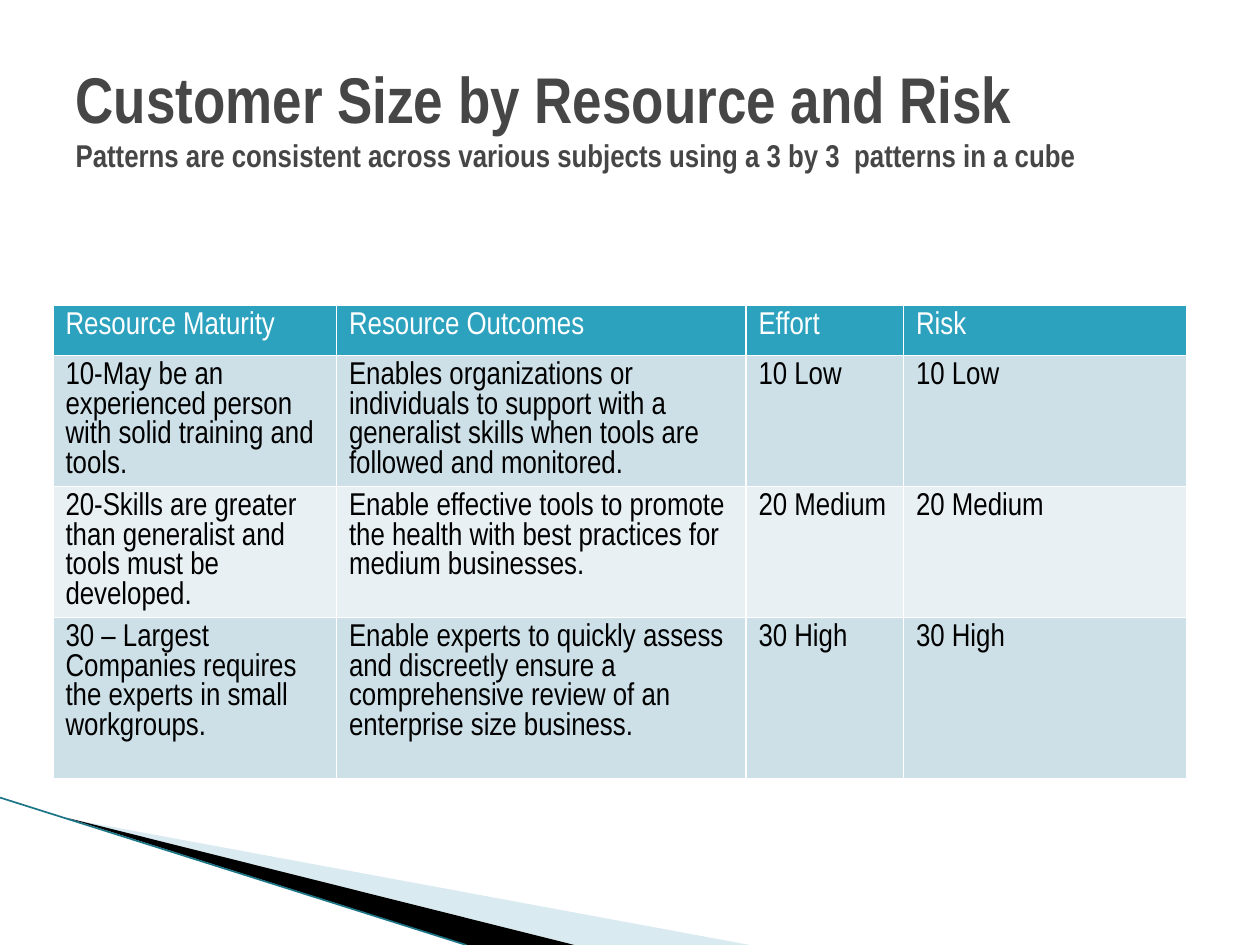
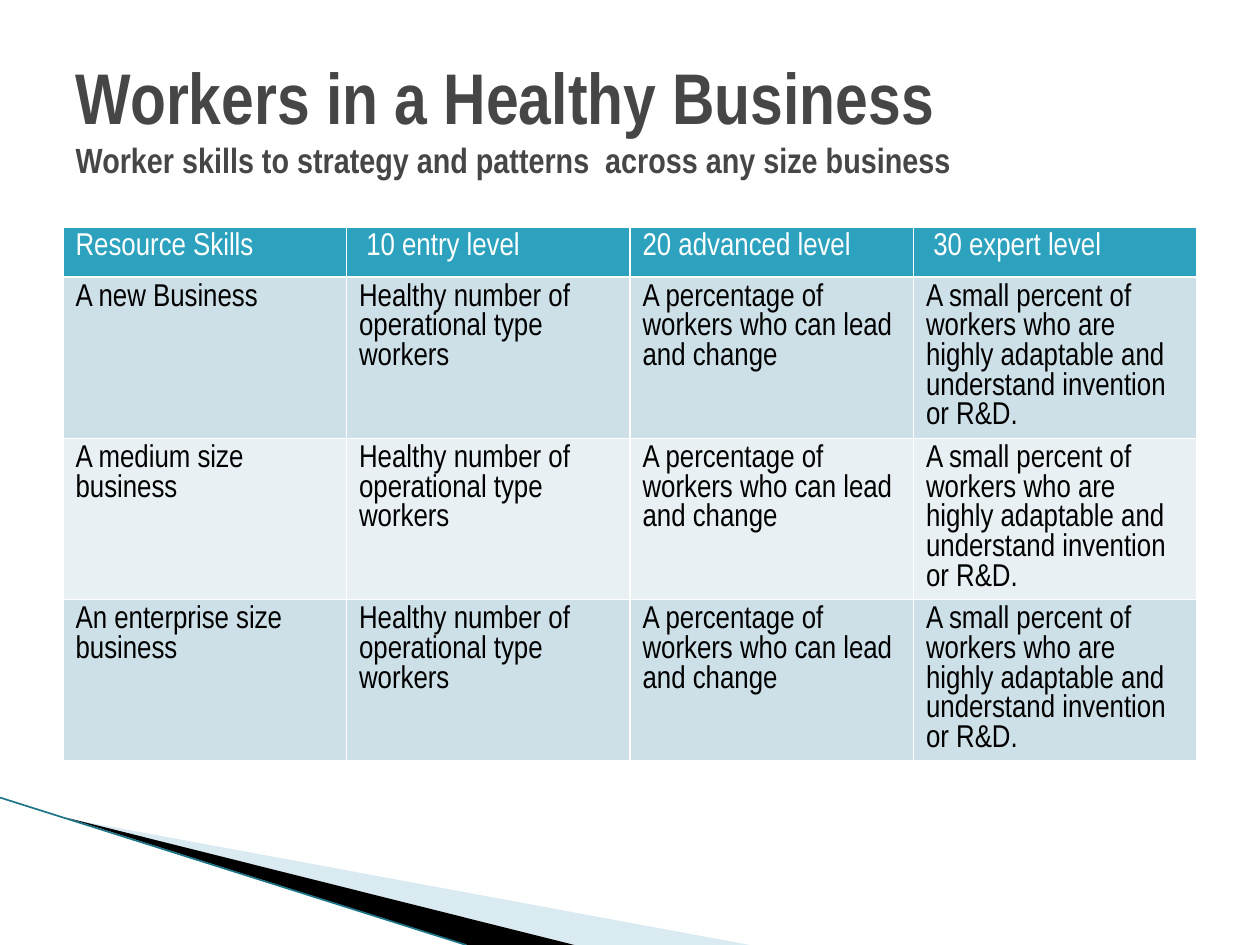
from dataclasses import dataclass

from lxml.etree import SubElement
from pptx import Presentation
from pptx.dml.color import RGBColor
from pptx.enum.shapes import MSO_CONNECTOR
from pptx.enum.text import MSO_ANCHOR, MSO_AUTO_SIZE, PP_ALIGN
from pptx.oxml.ns import qn
from pptx.util import Inches, Pt

SLIDE_W, SLIDE_H = Inches(10), Inches(7.5)
GRID_COLS, GRID_ROWS = 40, 30
FONT = "Arial Narrow"
TABLE_SIZE = 18

WHITE = RGBColor(0xFF, 0xFF, 0xFF)
BLACK = RGBColor(0, 0, 0)
TITLE_GREY = RGBColor(0x46, 0x46, 0x46)
HEADER_TEAL = RGBColor(0x2D, 0xA2, 0xBF)
BAND_DARK = RGBColor(0xCD, 0xE0, 0xE8)
BAND_LIGHT = RGBColor(0xE8, 0xF0, 0xF4)
WEDGE_BLUE = RGBColor(0xA0, 0xCB, 0xDC)
EDGE_TEAL = RGBColor(0x1B, 0x75, 0x87)


@dataclass(frozen=True)
class Wedge:
    points: tuple
    color: RGBColor
    opacity: int


@dataclass(frozen=True)
class TableSlide:
    title: str
    subtitle: str
    title_size: float
    subtitle_size: float
    left: float
    top: float
    col_widths: tuple
    row_heights: tuple
    rows: tuple


WEDGES = (
    Wedge(((2.2, 26), (23.8, 30), (18.24, 30)), WEDGE_BLUE, 40),
    Wedge(((2.12, 25.96), (18.24, 30), (14.84, 30)), BLACK, 100),
)

WORKER_MIX = (
    "Healthy number of operational type workers",
    "A percentage of workers who can lead and change",
    "A small percent of workers who are highly adaptable and understand "
    "invention or R&D.",
)

SLIDES = (
    TableSlide(
        "Customer Size by Resource and Risk",
        "Patterns are consistent across various subjects using a 3 by 3  patterns in a cube",
        36.9, 18, 1.68, 9.68,
        (9, 13, 5, 9), (1.6, 4.16, 4.16, 5.12),
        (
            ("Resource Maturity", "Resource Outcomes", "Effort", "Risk"),
            ("10-May be an experienced person with solid training and tools.",
             "Enables organizations or individuals to support with a generalist "
             "skills when tools are followed and monitored.",
             "10 Low", "10 Low"),
            ("20-Skills are greater than generalist and tools must be developed.",
             "Enable effective tools to promote the health with best practices "
             "for medium businesses.",
             "20 Medium", "20 Medium"),
            ("30 – Largest Companies requires the experts in small workgroups.",
             "Enable experts to quickly assess and discreetly ensure a "
             "comprehensive review of an enterprise size business.",
             "30 High", "30 High"),
        ),
    ),
    TableSlide(
        "Workers in a Healthy Business ",
        "Worker skills to strategy and patterns  across any size business",
        41, 20, 2, 7.2,
        (9,) * 4, (1.6,) + (5.12,) * 3,
        (
            ("Resource Skills", " 10 entry level", "20 advanced level", " 30 expert level"),
            ("A new Business", *WORKER_MIX),
            ("A medium size business", *WORKER_MIX),
            ("An enterprise size business", *WORKER_MIX),
        ),
    ),
)


def x(cols: float) -> int:
    return round(SLIDE_W * cols / GRID_COLS)


def y(rows: float) -> int:
    return round(SLIDE_H * rows / GRID_ROWS)


def format_run(r, size: float, color: RGBColor, bold: bool) -> None:
    r.font.name = FONT
    r.font.size = Pt(size)
    r.font.bold = bold
    r.font.color.rgb = color


def draw_wedge(s, wedge: Wedge) -> None:
    start, *rest = [(x(px), y(py)) for px, py in wedge.points]
    builder = s.shapes.build_freeform(*start)
    builder.add_line_segments(rest)
    sp = builder.convert_to_shape()
    sp.shadow.inherit = False
    sp.fill.solid()
    sp.fill.fore_color.rgb = wedge.color
    sp.line.fill.background()
    if wedge.opacity < 100:
        color = sp.fill._xPr.find(qn("a:solidFill"))[0]
        SubElement(color, qn("a:alpha"), val=str(wedge.opacity * 1000))


def draw_corner(s) -> None:
    for wedge in WEDGES:
        draw_wedge(s, wedge)
    edge = s.shapes.add_connector(
        MSO_CONNECTOR.STRAIGHT, x(0), y(25.32), x(14.8), y(30))
    edge.line.color.rgb = EDGE_TEAL
    edge.line.width = Pt(0.95)
    SubElement(edge._element.spPr, qn("a:effectLst"))


def draw_title(s, content: TableSlide) -> None:
    sp = s.shapes.title
    sp.left, sp.top, sp.width, sp.height = x(2), y(1.2), x(36), y(5)
    tf = sp.text_frame
    tf.text = f"{content.title}\v{content.subtitle}"
    tf.word_wrap = True
    tf.auto_size = MSO_AUTO_SIZE.NONE
    tf.vertical_anchor = MSO_ANCHOR.MIDDLE
    p = tf.paragraphs[0]
    p.alignment = PP_ALIGN.LEFT
    for r, size in zip(p.runs, (content.title_size, content.subtitle_size)):
        format_run(r, size, TITLE_GREY, True)


def add_borders(cell) -> None:
    props = cell._tc.get_or_add_tcPr()
    for i, side in enumerate(("a:lnL", "a:lnR", "a:lnT", "a:lnB")):
        line = props.makeelement(qn(side), {"w": str(Pt(1))})
        fill = SubElement(line, qn("a:solidFill"))
        SubElement(fill, qn("a:srgbClr"), val=str(WHITE))
        props.insert(i, line)


def draw_table(s, content: TableSlide) -> None:
    table = s.shapes.add_table(
        len(content.rows), len(content.col_widths), x(content.left), y(content.top),
        x(sum(content.col_widths)), y(sum(content.row_heights))).table
    for column, width in zip(table.columns, content.col_widths):
        column.width = x(width)
    for row, height in zip(table.rows, content.row_heights):
        row.height = y(height)
    for i, texts in enumerate(content.rows):
        fill = HEADER_TEAL if i == 0 else (BAND_LIGHT, BAND_DARK)[i % 2]
        for j, text in enumerate(texts):
            cell = table.cell(i, j)
            cell.text = text
            cell.fill.solid()
            cell.fill.fore_color.rgb = fill
            add_borders(cell)
            format_run(cell.text_frame.paragraphs[0].runs[0], TABLE_SIZE,
                       WHITE if i == 0 else BLACK, False)


def main() -> None:
    prs = Presentation()
    prs.slide_width, prs.slide_height = SLIDE_W, SLIDE_H
    title_only = prs.slide_layouts.get_by_name("Title Only")
    for content in SLIDES:
        s = prs.slides.add_slide(title_only)
        draw_corner(s)
        draw_table(s, content)
        draw_title(s, content)
    prs.save("out.pptx")


if __name__ == "__main__":
    main()
